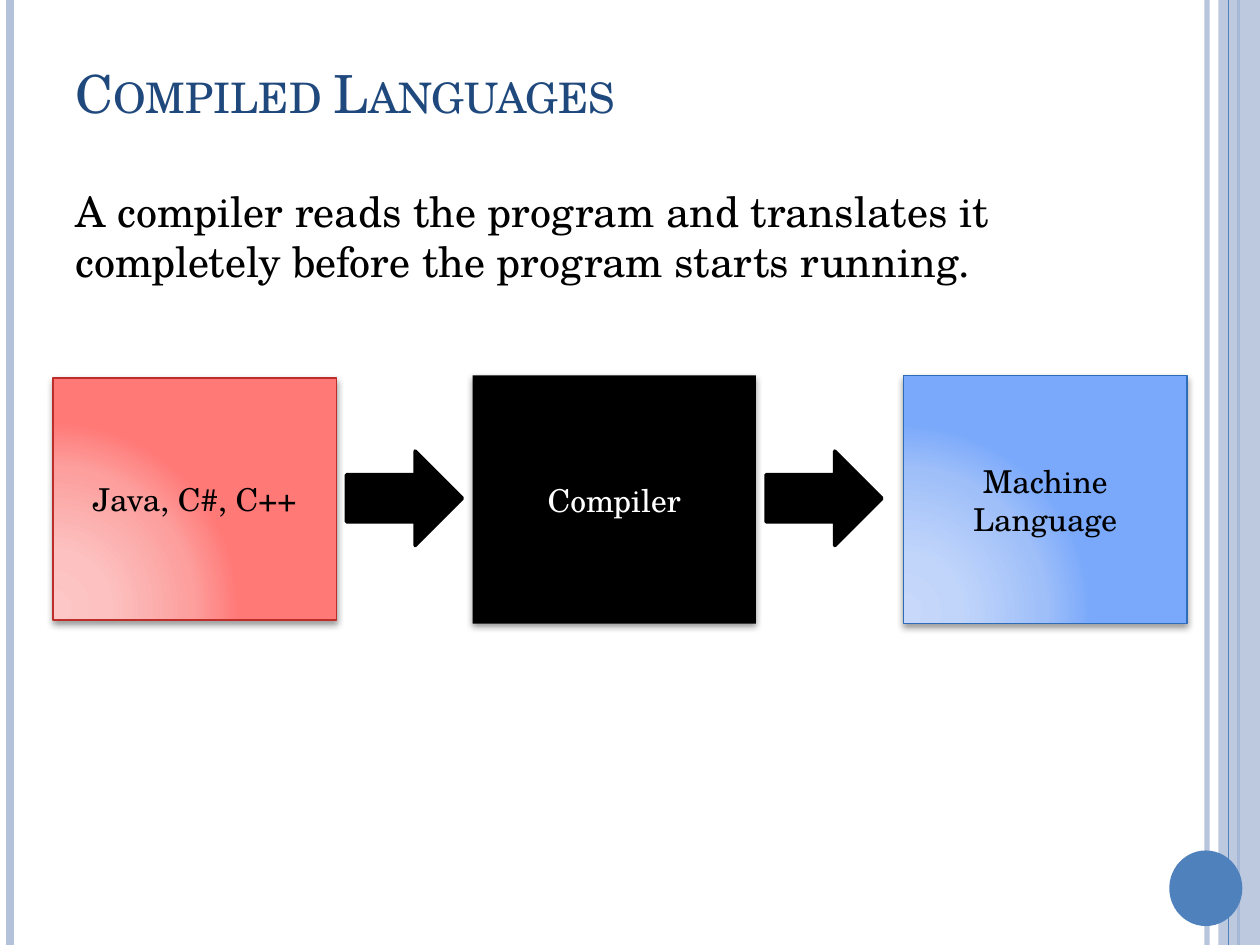
from dataclasses import dataclass

from lxml.etree import SubElement
from pptx import Presentation
from pptx.dml.color import RGBColor
from pptx.enum.shapes import MSO_CONNECTOR as Connector, MSO_SHAPE as Shape
from pptx.enum.text import MSO_ANCHOR as Anchor, PP_ALIGN as Align
from pptx.oxml.ns import qn
from pptx.util import Inches, Pt


@dataclass(frozen=True)
class Theme:
    font: str = "TeX Gyre Schola"
    title_size: int = 30
    body_size: int = 24
    label_size: int = 18
    title: str = "1F497D"
    accent: str = "4F81BD"
    pale: str = "B3C1DB"
    black: str = "000000"
    white: str = "FFFFFF"
    red_line: str = "BD2D29"
    blue_line: str = "2C6CB9"
    red_glow: tuple = ("FCC7C6", "FCC1C0", "FC9F9D", "FF7977")
    blue_glow: tuple = ("C7D8FB", "C1D5FA", "9FBFF9", "7AA9FB")
    glow_stops: tuple = (0, 30, 75, 100)


def add_xml(parent, tag, **attributes):
    element = SubElement(parent, qn(tag))
    for name, value in attributes.items():
        element.set(name, str(value))
    return element


def set_opacity(properties, percent):
    for color in properties.iter(qn("a:srgbClr")):
        add_xml(color, "a:alpha", val=percent * 1000)


class SlideBuilder:
    def __init__(self, slide, theme):
        self.slide = slide
        self.theme = theme

    def stripe(self, x, color, width, opacity=100):
        """Draw a vertical line over the full slide height."""
        line = self.slide.shapes.add_connector(
            Connector.STRAIGHT, Inches(x), 0, Inches(x), Inches(7.5))
        line.line.color.rgb = RGBColor.from_string(color)
        line.line.width = Pt(width)
        properties = line._element.spPr
        if opacity < 100:
            set_opacity(properties, opacity)
        add_xml(properties, "a:effectLst")

    def shape(self, kind, box, fill, line=None, line_width=1, opacity=100):
        shape = self.slide.shapes.add_shape(kind, *map(Inches, box))
        shape.shadow.inherit = False
        if isinstance(fill, tuple):
            self.glow(shape, fill)
        else:
            shape.fill.solid()
            shape.fill.fore_color.rgb = RGBColor.from_string(fill)
            if opacity < 100:
                set_opacity(shape._element.spPr, opacity)
        if line:
            shape.line.color.rgb = RGBColor.from_string(line)
            shape.line.width = Pt(line_width)
        else:
            shape.line.fill.background()
        return shape

    def glow(self, shape, colors):
        """Fill with a circular gradient centred near the lower left corner."""
        shape.fill.background()
        properties = shape._element.spPr
        gradient = add_xml(properties, "a:gradFill", rotWithShape=1)
        stops = add_xml(gradient, "a:gsLst")
        for position, color in zip(self.theme.glow_stops, colors):
            stop = add_xml(stops, "a:gs", pos=position * 1000)
            add_xml(stop, "a:srgbClr", val=color)
        circle = add_xml(gradient, "a:path", path="circle")
        add_xml(circle, "a:fillToRect", l=5000, t=100000, r=120000, b=10000)
        properties.replace(properties.find(qn("a:noFill")), gradient)

    def drop_shadow(self, shape, distance, opacity):
        effects = shape._element.spPr.find(qn("a:effectLst"))
        shadow = add_xml(effects, "a:outerShdw", blurRad=Pt(4), dist=Pt(distance),
                         dir=5400000, rotWithShape=0)
        add_xml(shadow, "a:srgbClr", val=self.theme.black)
        set_opacity(shadow, opacity)

    def fill_text(self, frame, text, size, color, anchor, align=Align.LEFT):
        frame.word_wrap = True
        frame.vertical_anchor = anchor
        paragraph = frame.paragraphs[0]
        paragraph.alignment = align
        run = paragraph.add_run()
        run.text = text
        run.font.name = self.theme.font
        run.font.size = Pt(size)
        run.font.color.rgb = RGBColor.from_string(color)
        return paragraph

    def text(self, box, text, size, color, anchor=Anchor.TOP):
        frame = self.slide.shapes.add_textbox(*map(Inches, box)).text_frame
        return self.fill_text(frame, text, size, color, anchor)

    def stage(self, box, label, fill, color, line=None, shadow=(2, 40)):
        """Draw one labelled box of the compilation flow."""
        shape = self.shape(Shape.RECTANGLE, box, fill, line)
        self.drop_shadow(shape, *shadow)
        self.fill_text(shape.text_frame, label, self.theme.label_size, color,
                       Anchor.MIDDLE, Align.CENTER)

    def arrow(self, x):
        black = self.theme.black
        self.shape(Shape.RIGHT_ARROW, (x, 3.58, 0.92, 0.75), black, black, 2)


def draw_frame(builder):
    theme = builder.theme
    builder.stripe(9.58, theme.pale, 3, 93)
    builder.stripe(0.08, theme.pale, 4.5)
    builder.stripe(9.83, theme.accent, 1.5)
    builder.shape(Shape.RECTANGLE, (9.67, 0, 0.33, 7.5), theme.pale, opacity=87)
    builder.stripe(9.75, theme.accent, 0.75)
    builder.shape(Shape.OVAL, (9.28, 6.75, 0.58, 0.6), theme.accent)


def draw_text(builder):
    theme = builder.theme
    title = builder.text((0.5, 0.3, 8.67, 0.87), "Compiled Languages",
                         theme.title_size, theme.title, Anchor.MIDDLE)
    title.runs[0].font._element.set("cap", "small")
    body = builder.text(
        (0.5, 1.42, 9.08, 1.42),
        "A compiler reads the program and translates it completely "
        "before the program starts running.",
        theme.body_size, theme.black)
    body.space_before = Pt(6)


def draw_flow(builder):
    theme = builder.theme
    builder.stage((0.42, 3, 2.25, 1.92), "Java, C#, C++",
                  theme.red_glow, theme.black, theme.red_line)
    builder.arrow(2.75)
    builder.stage((3.75, 2.98, 2.25, 1.97), "Compiler",
                  theme.black, theme.white, shadow=(1.6, 42))
    builder.stage((7.17, 2.98, 2.25, 1.97), "Machine Language",
                  theme.blue_glow, theme.black, theme.blue_line)
    builder.arrow(6.08)


def main():
    presentation = Presentation()
    presentation.slide_width = Inches(10)
    presentation.slide_height = Inches(7.5)
    slide = presentation.slides.add_slide(presentation.slide_layouts[6])
    builder = SlideBuilder(slide, Theme())
    draw_frame(builder)
    draw_text(builder)
    draw_flow(builder)
    presentation.save("out.pptx")


if __name__ == "__main__":
    main()
